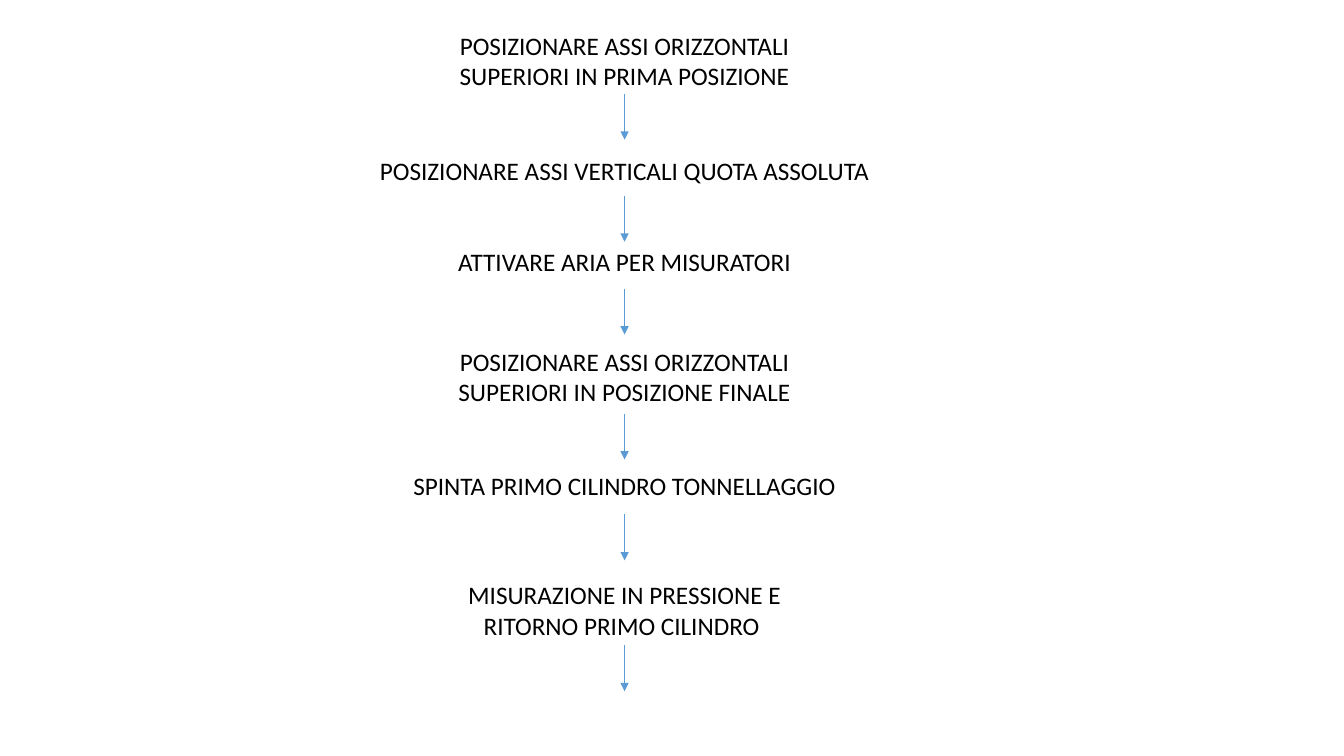
from dataclasses import dataclass

from lxml import etree
from pptx import Presentation
from pptx.dml.color import RGBColor
from pptx.enum.shapes import MSO_CONNECTOR
from pptx.enum.text import MSO_AUTO_SIZE, PP_ALIGN
from pptx.oxml.ns import qn
from pptx.util import Cm, Pt

STRAIGHT = MSO_CONNECTOR.STRAIGHT
CENTER = PP_ALIGN.CENTER
FIT_SHAPE = MSO_AUTO_SIZE.SHAPE_TO_FIT_TEXT

# Content: text, lines, box width, box top, top of the arrow below (cm)
STEPS = [
    ("POSIZIONARE ASSI ORIZZONTALI SUPERIORI IN PRIMA POSIZIONE", 2, 9.42, 0.64, 2.36),
    ("POSIZIONARE ASSI VERTICALI QUOTA ASSOLUTA", 1, 13.34, 3.78, 4.93),
    ("ATTIVARE ARIA PER MISURATORI", 1, 10.39, 6.07, 7.27),
    ("POSIZIONARE ASSI ORIZZONTALI SUPERIORI IN POSIZIONE FINALE", 2, 10.39, 8.59, 10.42),
    ("SPINTA PRIMO CILINDRO TONNELLAGGIO", 1, 12.34, 11.73, 12.96),
    ("MISURAZIONE IN PRESSIONE E RITORNO PRIMO CILINDRO ", 2, 10.39, 14.48, 16.26),
]


@dataclass(frozen=True)
class Theme:
    font: str = "Calibri"
    text_size: int = 18
    text_color: str = "000000"
    arrow_color: str = "5B9BD5"
    arrow_width: float = 0.5


THEME = Theme()

# Layout (cm)
AXIS = 15.74
ARROW_LENGTH = 1.16
LINE_HEIGHT = 0.77
BOX_PADDING = 0.25


def add_text(slide, text, *, left, top, width, height, size=THEME.text_size,
             color=THEME.text_color, align=CENTER):
    shape = slide.shapes.add_textbox(Cm(left), Cm(top), Cm(width), Cm(height))
    frame = shape.text_frame
    frame.word_wrap = True
    frame.auto_size = FIT_SHAPE
    paragraph = frame.paragraphs[0]
    paragraph.alignment = align
    run = paragraph.add_run()
    run.text = text
    run.font.name = THEME.font
    run.font.size = Pt(size)
    run.font.color.rgb = RGBColor.from_string(color)


def add_down_arrow(slide, top):
    connector = slide.shapes.add_connector(
        STRAIGHT, Cm(AXIS), Cm(top), Cm(AXIS), Cm(top + ARROW_LENGTH))
    connector.line.color.rgb = RGBColor.from_string(THEME.arrow_color)
    connector.line.width = Pt(THEME.arrow_width)
    # Arrowhead and no shadow
    properties = connector.line._get_or_add_ln().getparent()
    etree.SubElement(properties.find(qn("a:ln")), qn("a:tailEnd"), type="triangle")
    etree.SubElement(properties, qn("a:effectLst"))


def main():
    presentation = Presentation()
    presentation.slide_width = Cm(33.87)
    presentation.slide_height = Cm(19.05)
    slide = presentation.slides.add_slide(presentation.slide_layouts[6])

    # Steps centred on one axis, each followed by an arrow
    for text, lines, width, top, arrow_top in STEPS:
        add_text(slide, text, left=AXIS - width / 2, top=top, width=width,
                 height=lines * LINE_HEIGHT + BOX_PADDING)
        add_down_arrow(slide, arrow_top)

    presentation.save("out.pptx")


if __name__ == "__main__":
    main()
